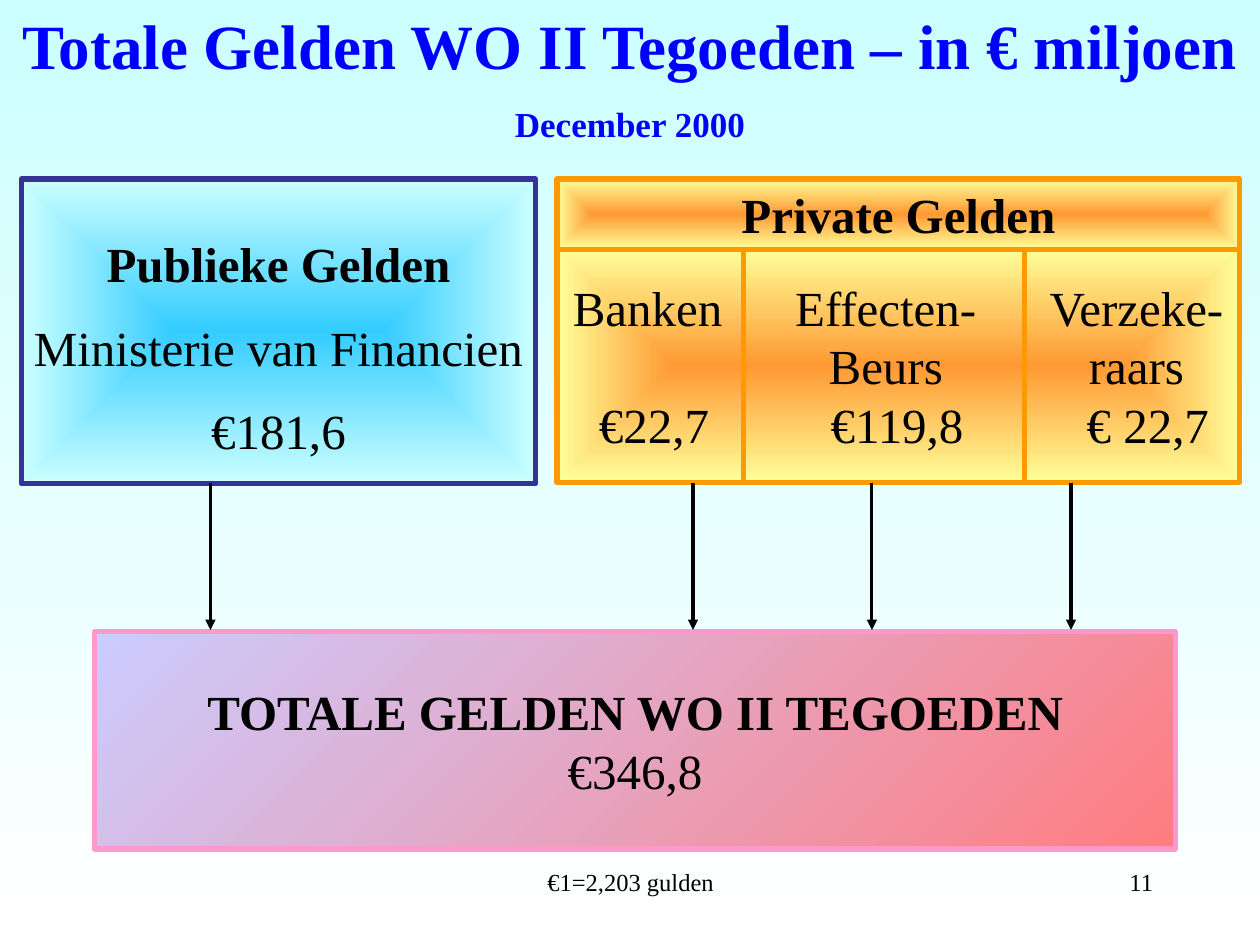
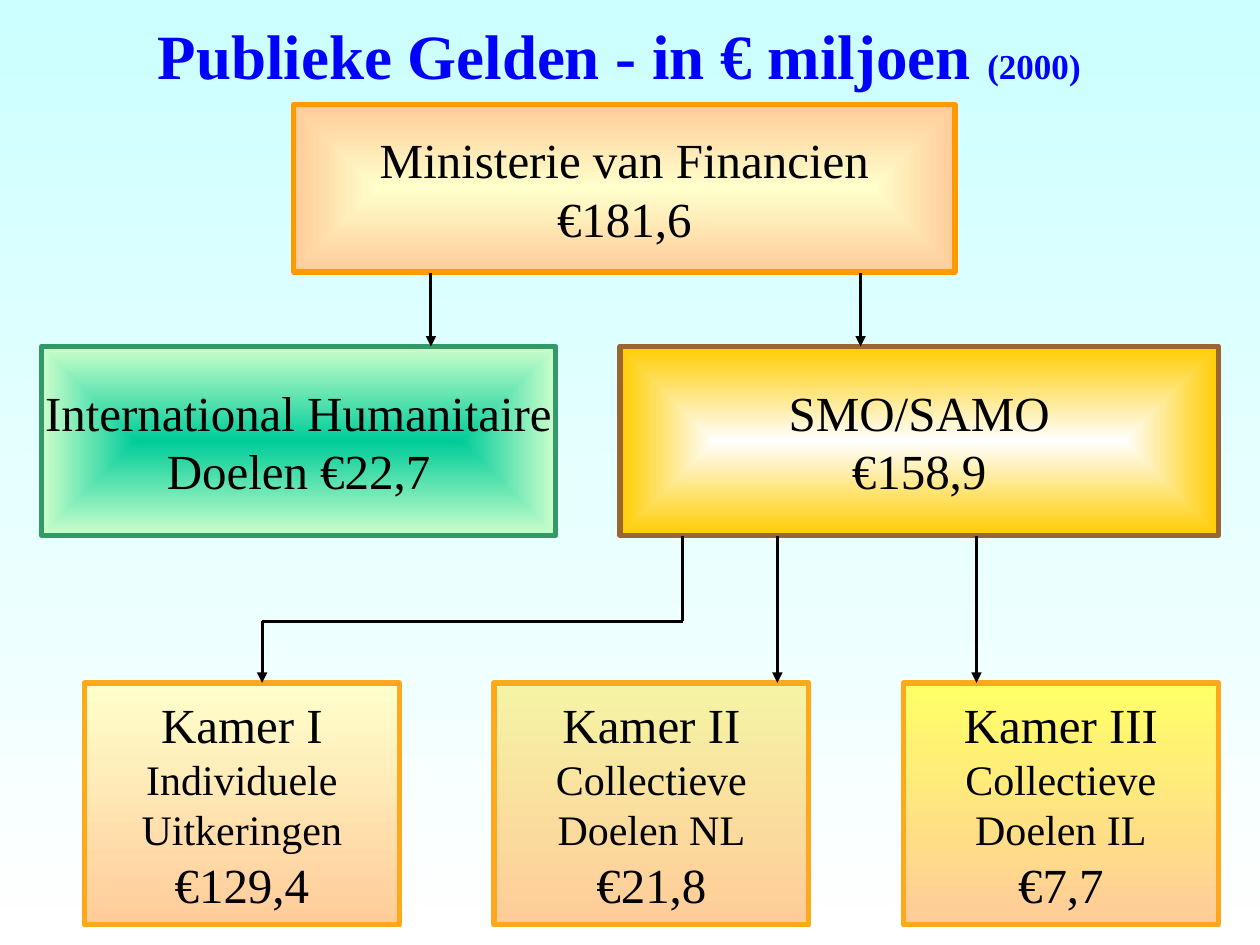
"""Builds two slides that show how the WO II funds are divided."""
from lxml.etree import SubElement
from pptx import Presentation
from pptx.dml.color import RGBColor
from pptx.enum.shapes import MSO_CONNECTOR, MSO_SHAPE
from pptx.enum.text import MSO_ANCHOR, MSO_AUTO_SIZE, PP_ALIGN
from pptx.oxml.ns import qn
from pptx.util import Inches, Pt

COLORS = {
    "title": "0000FF", "text": "000000", "white": "FFFFFF", "sky": "CCFFFF",
    "blue": "33CCFF", "navy": "333399", "orange": "FF9933", "lemon": "FFFF99",
    "amber": "FF9900", "lilac": "CCCCFF", "coral": "FF7C80", "pink": "FF99CC",
    "cream": "FFFFCC", "peach": "FFCC99", "teal": "00CC99", "mint": "CCFFCC",
    "green": "339966", "gold": "FFCC00", "brown": "996633", "khaki": "F4F4A4",
    "yellow": "FFFF66", "apricot": "FEA81C",
}
FONT = "Times New Roman"
BODY, DETAIL, NOTE = 28, 24, 14


def color(name):
    return RGBColor.from_string(COLORS[name])


class Painter:
    def __init__(self, deck):
        self.deck = deck
        self.page = None

    def new_page(self):
        self.page = self.deck.slides.add_slide(self.deck.slide_layouts[5])
        self.blend(self.page.background.fill, "sky", "white", 270)

    def blend(self, fill, start, end, angle):
        fill.gradient()
        fill.gradient_angle = angle
        for stop, name, position in zip(fill.gradient_stops, (start, end), (0, 1)):
            stop.color.rgb = color(name)
            stop.position = position

    def style(self, font, size, bold=False, shade="text"):
        font.name = FONT
        font.size = Pt(size)
        font.bold = bold
        font.color.rgb = color(shade)

    def set_lines(self, frame, lines, align=PP_ALIGN.CENTER, gap=0, shade="text"):
        for index, (text, size, bold) in enumerate(lines):
            para = frame.add_paragraph() if index else frame.paragraphs[0]
            para.text = text
            para.alignment = align
            para.space_before = Pt(gap if index else 0)
            self.style(para.font, size, bold, shade)

    def title(self, left, top, width, height, lines, suffix=None):
        box = self.page.shapes.title
        box.left, box.top = Inches(left), Inches(top)
        box.width, box.height = Inches(width), Inches(height)
        frame = box.text_frame
        frame.auto_size = MSO_AUTO_SIZE.NONE
        frame.vertical_anchor = MSO_ANCHOR.TOP
        self.set_lines(frame, lines, gap=12, shade="title")
        if suffix:
            span = frame.paragraphs[0].add_run()
            span.text = suffix
            span.font.size = Pt(20)

    def text(self, left, top, width, height, lines, align=PP_ALIGN.CENTER):
        box = self.page.shapes.add_textbox(
            Inches(left), Inches(top), Inches(width), Inches(height))
        box.text_frame.word_wrap = True
        self.set_lines(box.text_frame, lines, align)
        return box.text_frame

    def column(self, left, top, width, height, names, amount, shift):
        lines = [(line, BODY, False) for line in (*names, amount)]
        frame = self.text(left, top, width, height, lines)
        frame.vertical_anchor = MSO_ANCHOR.MIDDLE
        last = frame.paragraphs[-1]
        last.space_before = Pt(33 * (2 - len(names)))
        last._p.get_or_add_pPr().set("marL", str(Inches(2 * shift)))

    def panel(self, left, top, width, height, blend, border, lines=(), angle=None,
              gap=0, inset=0.05):
        box = self.page.shapes.add_shape(
            MSO_SHAPE.RECTANGLE, Inches(left), Inches(top), Inches(width), Inches(height))
        box.shadow.inherit = False
        self.blend(box.fill, *blend, angle or 0)
        if angle is None:
            gradient = box._element.spPr.find(qn("a:gradFill"))
            gradient.remove(gradient.find(qn("a:lin")))
            focus = SubElement(gradient, qn("a:path"))
            focus.set("path", "shape")
            center = SubElement(focus, qn("a:fillToRect"))
            for side in "ltrb":
                center.set(side, "50000")
        box.line.color.rgb = color(border)
        box.line.width = Pt(3)
        frame = box.text_frame
        frame.word_wrap = False
        frame.vertical_anchor = MSO_ANCHOR.MIDDLE
        frame.margin_top = Inches(inset)
        self.set_lines(frame, lines, gap=gap)

    def line(self, start, end, shade="text", width=1.75, arrow=False):
        link = self.page.shapes.add_connector(
            MSO_CONNECTOR.STRAIGHT, *(Inches(value) for value in (*start, *end)))
        link.line.color.rgb = color(shade)
        link.line.width = Pt(width)
        properties = link._element.spPr
        if arrow:
            SubElement(properties.find(qn("a:ln")), qn("a:tailEnd")).set("type", "triangle")
        SubElement(properties, qn("a:effectLst"))

    def drops(self, columns, top, bottom):
        for x in columns:
            self.line((x, top), (x, bottom), arrow=True)


def total_funds(painter):
    painter.new_page()
    painter.title(0, 0, 10, 1.2, [
        ("Totale Gelden WO II Tegoeden – in € miljoen", 36, True),
        ("December 2000", 20, True)])
    painter.text(3.42, 6.83, 3.17, 0.5, [("€1=2,203 gulden", NOTE, False)])
    painter.text(7.17, 6.83, 2.08, 0.5, [("11", NOTE, False)], PP_ALIGN.RIGHT)
    painter.panel(0.17, 1.42, 4.08, 2.42, ("blue", "sky"), "navy", [
        ("Publieke Gelden", BODY, True),
        ("Ministerie van Financien", BODY, False),
        ("€181,6", BODY, False)], gap=14, inset=0.29)

    private = ("orange", "lemon")
    painter.panel(4.42, 1.97, 5.42, 1.86, private, "amber")
    for x in (5.9, 8.13):
        painter.line((x, 1.97), (x, 3.83), "amber", 3)
    painter.panel(4.42, 1.42, 5.42, 0.56, private, "amber",
                  [("Private Gelden", BODY, True)])
    for center, names, amount, shift in (
            (5.14, ["Banken"], "€22,7", 0.05),
            (7.03, ["Effecten-", "Beurs"], "€119,8", 0.09),
            (9.02, ["Verzeke-", "raars"], "€ 22,7", 0.09)):
        painter.column(center - 0.9, 1.97, 1.8, 1.86, names, amount, shift)

    painter.panel(0.75, 5.01, 8.58, 1.73, ("lilac", "coral"), "pink", [
        ("TOTALE GELDEN WO II TEGOEDEN", BODY, True),
        ("€346,8", BODY, False)], angle=315)
    painter.drops((1.67, 5.5, 6.92, 8.5), 3.83, 5)


def public_funds(painter):
    painter.new_page()
    painter.title(0, 0.08, 9.83, 0.7,
                  [("Publieke Gelden - in € miljoen ", 36, True)], "(2000)")
    for place, blend, border, texts in (
            ((2.33, 0.83, 5.25, 1.33), ("cream", "peach"), "amber",
             ("Ministerie van Financien", "€181,6")),
            ((0.33, 2.75, 4.08, 1.5), ("teal", "mint"), "green",
             ("International Humanitaire", "Doelen €22,7")),
            ((4.92, 2.75, 4.75, 1.5), ("white", "gold"), "brown",
             ("SMO/SAMO", "€158,9"))):
        painter.panel(*place, blend, border, [(text, BODY, False) for text in texts])

    chambers = (
        ("cream", "Kamer I", "Individuele", "Uitkeringen", "€129,4"),
        ("khaki", "Kamer II", "Collectieve", "Doelen NL", "€21,8"),
        ("yellow", "Kamer III", "Collectieve", "Doelen IL", "€7,7"))
    for index, (shade, *texts) in enumerate(chambers):
        lines = [(text, size, False)
                 for text, size in zip(texts, (BODY, DETAIL, DETAIL, BODY))]
        painter.panel(0.67 + 3.25 * index, 5.42, 2.5, 1.92, (shade, "peach"),
                      "apricot", lines, angle=270)

    painter.drops((3.42, 6.83), 2.17, 2.75)
    painter.line((5.42, 4.25), (5.42, 4.93))
    painter.line((5.42, 4.93), (2.08, 4.93))
    painter.drops((2.08,), 4.93, 5.42)
    painter.drops((6.17, 7.75), 4.25, 5.42)


def main():
    deck = Presentation()
    deck.slide_width, deck.slide_height = Inches(10), Inches(7.5)
    painter = Painter(deck)
    total_funds(painter)
    public_funds(painter)
    deck.save("out.pptx")


if __name__ == "__main__":
    main()
